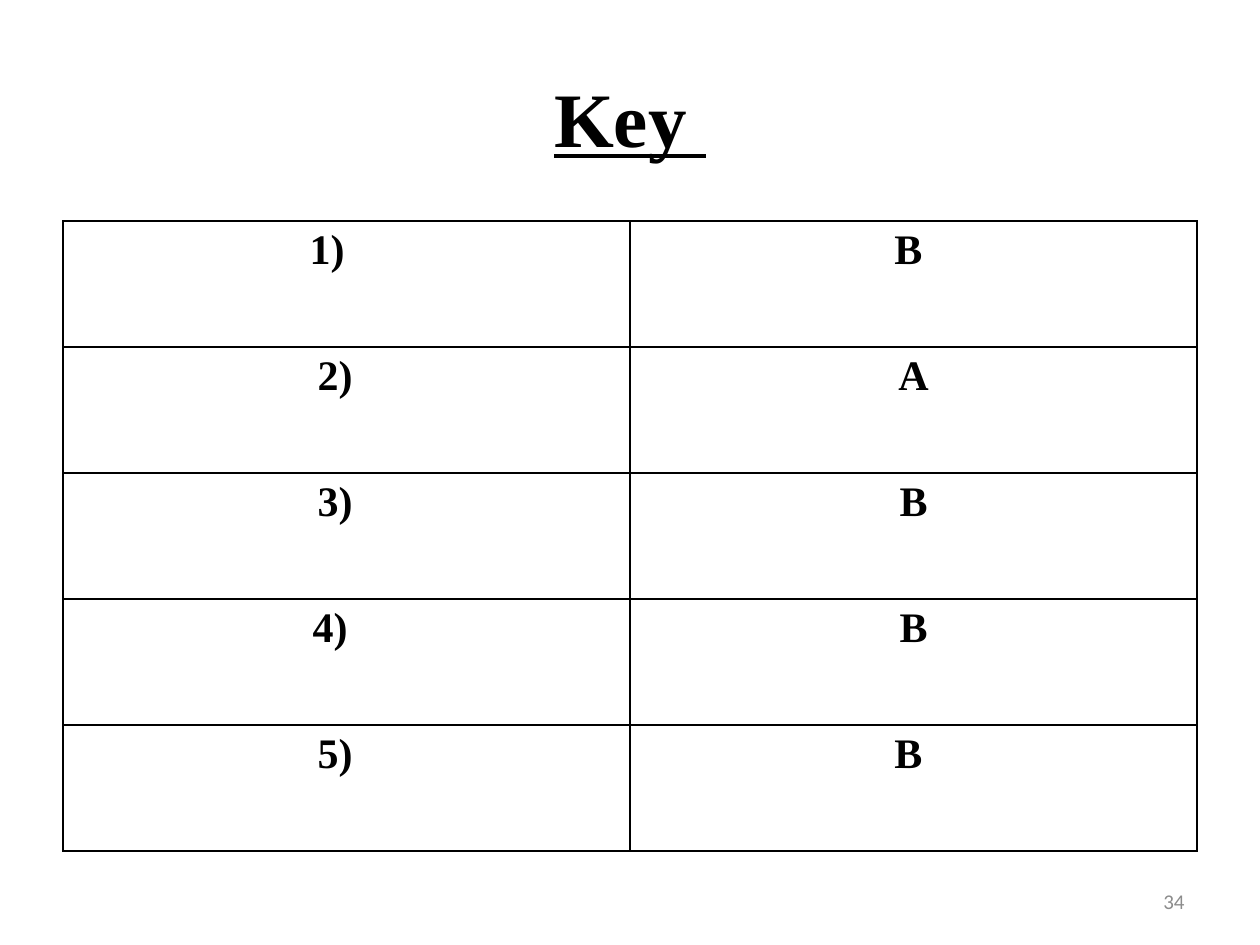
from dataclasses import dataclass

from lxml.etree import SubElement
from pptx import Presentation
from pptx.dml.color import RGBColor
from pptx.enum.text import MSO_ANCHOR, PP_ALIGN
from pptx.oxml.ns import qn
from pptx.util import Pt

EMU_PER_PX = 914400 / 126


@dataclass(frozen=True)
class Theme:
    ink: str = "000000"
    muted: str = "8C8C8C"
    heading_font: str = "Times New Roman"
    footer_font: str = "Calibri"
    title_size: int = 44
    cell_size: int = 24
    footer_size: int = 12
    border_width: int = 1


THEME = Theme()

# Hanging indent of the question number and right cell margin in px, answer
ANSWERS = [
    (63, 13, "B "),
    (47, 13, "A"),
    (47, 13, "B"),
    (47, 23, "B"),
    (47, 13, "B "),
]


def px(length):
    return round(length * EMU_PER_PX)


def style_font(font, name, size, color, bold=False):
    font.name = name
    font.size = Pt(size)
    font.bold = bold
    font.color.rgb = RGBColor.from_string(color)


def add_text(slide, box, text, align):
    """Add a one-line, vertically centred text box and return its paragraph."""
    frame = slide.shapes.add_textbox(*map(px, box)).text_frame
    frame.word_wrap = True
    frame.vertical_anchor = MSO_ANCHOR.MIDDLE
    paragraph = frame.paragraphs[0]
    paragraph.text = text
    paragraph.alignment = align
    return paragraph


def add_title(slide, box):
    font = add_text(slide, box, "Key ", PP_ALIGN.CENTER).font
    style_font(font, THEME.heading_font, THEME.title_size, THEME.ink, bold=True)
    font.underline = True


def add_page_number(slide, box):
    font = add_text(slide, box, "34", PP_ALIGN.RIGHT).font
    style_font(font, THEME.footer_font, THEME.footer_size, THEME.muted)


def set_borders(cell):
    properties = cell._tc.get_or_add_tcPr()
    for position, side in enumerate(("a:lnL", "a:lnR", "a:lnT", "a:lnB")):
        line = properties.makeelement(qn(side), {"w": str(Pt(THEME.border_width))})
        fill = SubElement(line, qn("a:solidFill"))
        SubElement(fill, qn("a:srgbClr"), val=THEME.ink)
        properties.insert(position, line)


def fill_cell(cell, text):
    """Fill a cell with bold centred text and return its paragraph."""
    cell.fill.background()
    set_borders(cell)
    paragraph = cell.text_frame.paragraphs[0]
    paragraph.alignment = PP_ALIGN.CENTER
    run = paragraph.add_run()
    run.text = text
    style_font(run.font, THEME.heading_font, THEME.cell_size, THEME.ink, bold=True)
    return paragraph


def number_paragraph(paragraph, number, indent):
    """Number the paragraph automatically, with a hanging indent in px."""
    properties = paragraph._p.get_or_add_pPr()
    properties.set("marL", str(px(indent)))
    properties.set("indent", str(-px(indent)))
    SubElement(properties, qn("a:buFont"), typeface=THEME.heading_font)
    SubElement(properties, qn("a:buAutoNum"), type="arabicParenR", startAt=str(number))


def add_answer_table(slide, box):
    table = slide.shapes.add_table(len(ANSWERS), 2, *map(px, box)).table
    table.first_row = False
    table.horz_banding = False
    for row, (indent, right_margin, answer) in enumerate(ANSWERS):
        number_cell = table.cell(row, 0)
        # The number only shows beside a paragraph that holds a character
        number_paragraph(fill_cell(number_cell, " "), row + 1, indent)
        number_cell.margin_right = px(right_margin)
        fill_cell(table.cell(row, 1), answer)


def main():
    presentation = Presentation()
    presentation.slide_width = px(1260)
    presentation.slide_height = px(945)
    slide = presentation.slides.add_slide(presentation.slide_layouts[6])
    add_title(slide, (63, 38, 1134, 158))
    add_answer_table(slide, (63, 221, 1134, 630))
    add_page_number(slide, (903, 876, 294, 50))
    presentation.save("out.pptx")


if __name__ == "__main__":
    main()
